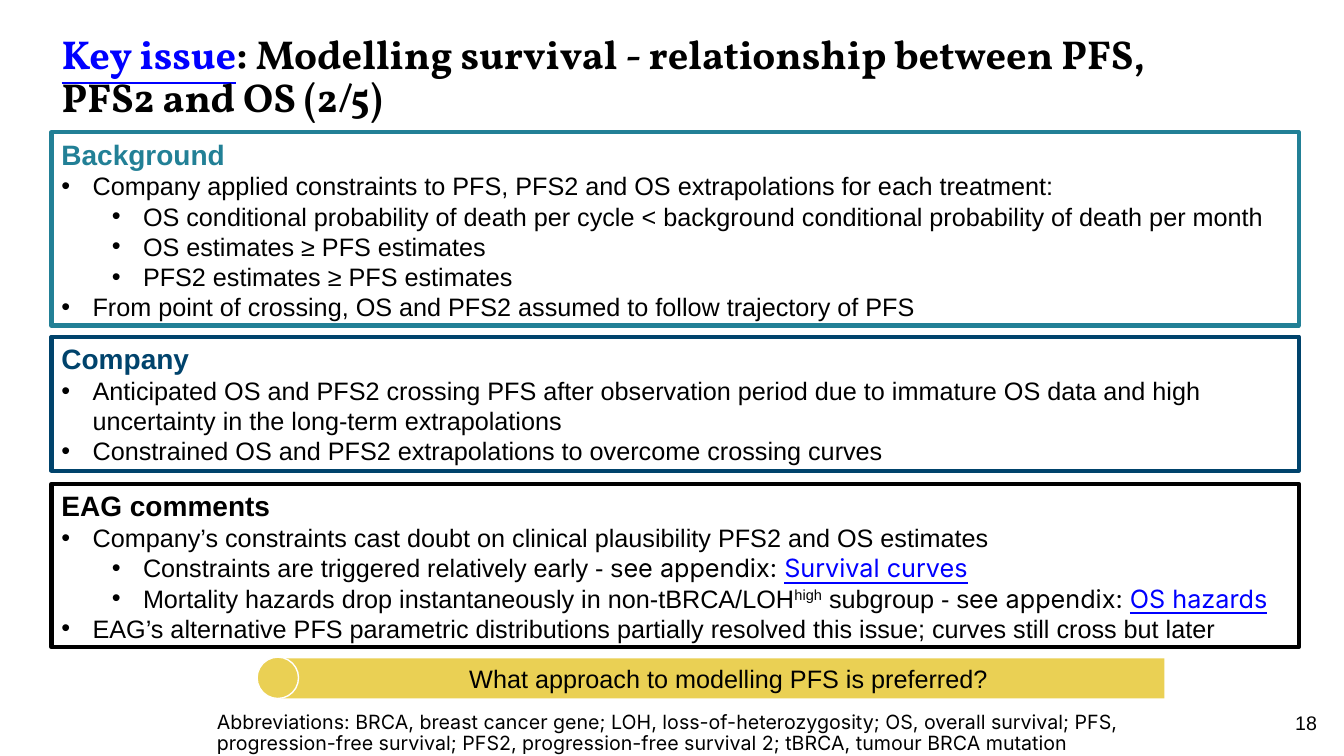
from lxml.etree import SubElement
from pptx import Presentation
from pptx.dml.color import RGBColor
from pptx.enum.shapes import MSO_SHAPE
from pptx.enum.text import MSO_ANCHOR, MSO_AUTO_SIZE, PP_ALIGN
from pptx.oxml.ns import qn
from pptx.util import Inches, Pt

WIDTH, HEIGHT = Inches(13.33), Inches(7.5)
LEFT, PANEL_WIDTH = 3.83, 92.8
BLACK = RGBColor(0x00, 0x00, 0x00)
WHITE = RGBColor(0xFF, 0xFF, 0xFF)
BLUE = RGBColor(0x00, 0x00, 0xFF)
TEAL = RGBColor(0x22, 0x80, 0x96)
NAVY = RGBColor(0x00, 0x43, 0x6C)
YELLOW = RGBColor(0xEA, 0xD0, 0x54)
INTER = {"font": "Inter"}
LINK = {"font": "Inter", "color": BLUE, "underline": True}

BACKGROUND = [
    (0, "Company applied constraints to PFS, PFS2 and OS extrapolations for each treatment:"),
    (1, "OS conditional probability of death per cycle < background conditional "
        "probability of death per month"),
    (1, "OS estimates ≥ PFS estimates"),
    (1, "PFS2 estimates ≥ PFS estimates"),
    (0, "From point of crossing, OS and PFS2 assumed to follow trajectory of PFS"),
]
COMPANY = [
    (0, "Anticipated OS and PFS2 crossing PFS after observation period due to immature "
        "OS data and high uncertainty in the long-term extrapolations"),
    (0, "Constrained OS and PFS2 extrapolations to overcome crossing curves"),
]
EAG = [
    (0, "Company’s constraints cast doubt on clinical plausibility PFS2 and OS estimates"),
    (1, [("Constraints are triggered relatively early - s", {}),
         ("ee appendix: ", INTER), ("Survival curves", LINK)]),
    (1, [("Mortality hazards drop instantaneously in non-tBRCA/LOH", {}),
         ("high", {"baseline": 30}), (" subgroup - s", {}),
         ("ee appendix: ", INTER), ("OS hazards", LINK)]),
    (0, "EAG’s alternative PFS parametric distributions partially resolved this issue; "
        "curves still cross but later"),
]


def area(left, top, width, height):
    """Turn percentages of the slide into lengths."""
    return (int(WIDTH * left / 100), int(HEIGHT * top / 100),
            int(WIDTH * width / 100), int(HEIGHT * height / 100))


def add_run(p, text, font="Arial", size=18, color=BLACK, bold=False,
            underline=False, baseline=0):
    """Add one formatted run to a paragraph."""
    r = p.add_run()
    r.text = text
    r.font.name, r.font.size = font, Pt(size)
    r.font.bold, r.font.underline = bold, underline
    r.font.color.rgb = color
    if baseline:
        r.font._element.set("baseline", str(baseline * 1000))


def set_bullet(p, level):
    """Give a paragraph a hanging bullet at its level."""
    p.level = level
    props = p._p.get_or_add_pPr()
    props.set("marL", str(Inches(0.31 + 0.5 * level)))
    props.set("indent", str(-Inches(0.31)))
    SubElement(props, qn("a:buFont"), typeface="Arial")
    SubElement(props, qn("a:buChar"), char="•")


def add_block(s, kind, box, fill=None, line=None, line_width=1):
    """Add a flat preset shape."""
    sp = s.shapes.add_shape(kind, *area(*box))
    sp.shadow.inherit = False
    if fill is None:
        sp.fill.background()
    else:
        sp.fill.solid()
        sp.fill.fore_color.rgb = fill
    if line is None:
        sp.line.fill.background()
    else:
        sp.line.color.rgb = line
        sp.line.width = Pt(line_width)
    return sp


def add_panel(s, top, height, color, heading, points):
    """Add an outlined panel with a heading and bulleted points."""
    sp = add_block(s, MSO_SHAPE.RECTANGLE, (LEFT, top, PANEL_WIDTH, height),
                   line=color, line_width=3)
    tf = sp.text_frame
    tf.word_wrap = True
    tf.vertical_anchor = MSO_ANCHOR.TOP
    p = tf.paragraphs[0]
    p.alignment = PP_ALIGN.LEFT
    add_run(p, heading, size=20, color=color, bold=True)
    for level, content in points:
        p = tf.add_paragraph()
        p.alignment = PP_ALIGN.LEFT
        set_bullet(p, level)
        for text, style in [(content, {})] if isinstance(content, str) else content:
            add_run(p, text, **style)


def add_question(s, text):
    """Add the yellow question bar with its round end."""
    bar = add_block(s, MSO_SHAPE.RECTANGLE, (20.4, 87.07, 66.24, 5.33), fill=YELLOW)
    tf = bar.text_frame
    tf.word_wrap = True
    tf.margin_left = Inches(0.28)
    tf.vertical_anchor = MSO_ANCHOR.MIDDLE
    tf.paragraphs[0].alignment = PP_ALIGN.CENTER
    add_run(tf.paragraphs[0], text)
    add_block(s, MSO_SHAPE.OVAL, (19.13, 86.93, 3.08, 5.47), fill=YELLOW, line=WHITE)


def fill_placeholder(sp, box, runs):
    """Move a placeholder and write plain left-aligned text in it."""
    sp.left, sp.top, sp.width, sp.height = area(*box)
    tf = sp.text_frame
    tf.word_wrap = True
    tf.auto_size = MSO_AUTO_SIZE.NONE
    tf.vertical_anchor = MSO_ANCHOR.TOP
    p = tf.paragraphs[0]
    p.alignment = PP_ALIGN.LEFT
    p.line_spacing = 0.9
    p.space_before = Pt(0)
    props = p._p.get_or_add_pPr()
    props.set("marL", "0")
    props.set("indent", "0")
    SubElement(props, qn("a:buNone"))
    for text, style in runs:
        add_run(p, text, **style)


def add_page_number(s, number):
    """Add the page number at the lower right."""
    tf = s.shapes.add_textbox(*area(94.9, 93.33, 3.83, 5.33)).text_frame
    tf.word_wrap = True
    tf.paragraphs[0].alignment = PP_ALIGN.RIGHT
    add_run(tf.paragraphs[0], number, size=14)


def main():
    """Build and save the slide."""
    prs = Presentation()
    prs.slide_width, prs.slide_height = WIDTH, HEIGHT
    s = prs.slides.add_slide(prs.slide_layouts[1])
    heading = {"font": "Vollkorn", "size": 28.8, "bold": True}
    fill_placeholder(s.shapes.title, (LEFT, 3.87, 88.75, 8.67), [
        ("Key issue", {**heading, "color": BLUE, "underline": True}),
        (": Modelling survival - relationship between PFS, PFS2 and OS (2/5)", heading),
    ])
    add_panel(s, 17.47, 25.6, TEAL, "Background", BACKGROUND)
    add_panel(s, 44.53, 17.73, NAVY, "Company", COMPANY)
    add_panel(s, 64, 21.6, BLACK, "EAG comments", EAG)
    add_question(s, "What approach to modelling PFS is preferred?")
    fill_placeholder(s.placeholders[1], (15.38, 93.6, 74.57, 5.33), [
        ("Abbreviations: BRCA, breast cancer gene; LOH, loss-of-heterozygosity; "
         "OS, overall survival; PFS, progression-free survival; PFS2, "
         "progression-free survival 2; tBRCA, tumour BRCA mutation",
         {"font": "Inter", "size": 14}),
    ])
    add_page_number(s, "18")
    prs.save("out.pptx")


if __name__ == "__main__":
    main()
